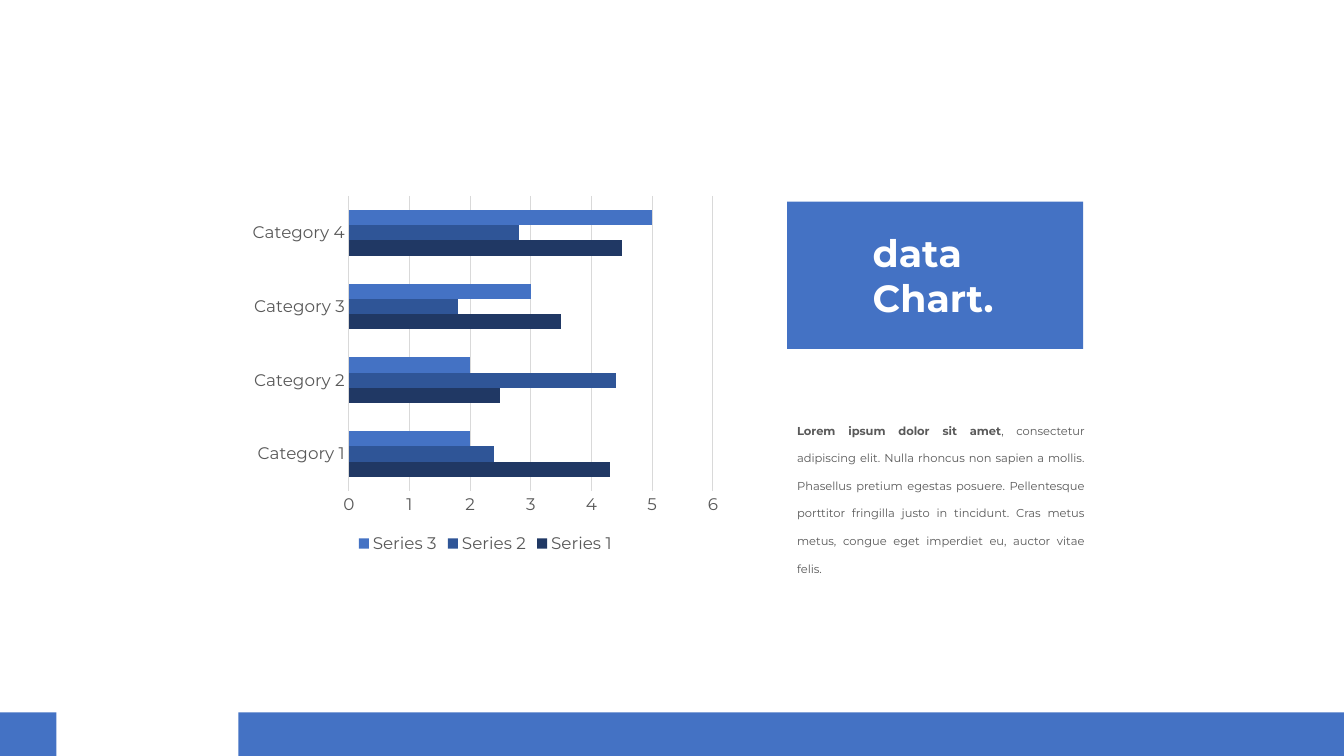
from pptx import Presentation
from pptx.chart.data import CategoryChartData
from pptx.dml.color import RGBColor
from pptx.enum.chart import XL_CHART_TYPE, XL_LEGEND_POSITION, XL_TICK_MARK
from pptx.enum.shapes import MSO_SHAPE
from pptx.enum.text import MSO_ANCHOR, MSO_AUTO_SIZE, PP_ALIGN
from pptx.util import Cm, Pt

FONT = "Montserrat"
HUES = {"blue": "4472C4", "mid": "2F5597", "navy": "203864",
        "text": "595959", "grid": "D9D9D9", "white": "FFFFFF"}
WIDTH, HEIGHT = 33.87, 19.05
SERIES = [("Series 1", (4.3, 2.5, 3.5, 4.5), "navy"),
          ("Series 2", (2.4, 4.4, 1.8, 2.8), "mid"),
          ("Series 3", (2, 2, 3, 5), "blue")]
LEAD = "Lorem ipsum dolor sit amet"
BODY = (", consectetur adipiscing elit. Nulla rhoncus non sapien a mollis. "
        "Phasellus pretium egestas posuere. Pellentesque porttitor fringilla "
        "justo in tincidunt. Cras metus metus, congue eget imperdiet eu, "
        "auctor vitae felis.")


def hue(name):
    return RGBColor.from_string(HUES[name])


def style(font, size, color, bold=False):
    font.name, font.size, font.bold = FONT, Pt(size), bold
    font.color.rgb = hue(color)


def add_run(para, text, size, color, bold=False):
    run = para.add_run()
    run.text = text
    style(run.font, size, color, bold)


def add_block(slide, x, y, w, h):
    """Draw a plain blue rectangle."""
    block = slide.shapes.add_shape(MSO_SHAPE.RECTANGLE, Cm(x), Cm(y), Cm(w), Cm(h))
    block.shadow.inherit = False
    block.fill.solid()
    block.fill.fore_color.rgb = hue("blue")
    block.line.fill.background()


def add_footer(slide, x, y, w, h):
    """Draw the bottom band, with a gap near its left end."""
    left, right = 1.42, 6.01
    add_block(slide, x + right, y, w - right, h)
    add_block(slide, x, y, left, h)


def add_bars(slide, x, y, w, h):
    data = CategoryChartData()
    data.categories = [f"Category {n}" for n in range(1, 5)]
    for name, vals, _ in SERIES:
        data.add_series(name, vals)
    chart = slide.shapes.add_chart(XL_CHART_TYPE.BAR_CLUSTERED,
                                   Cm(x), Cm(y), Cm(w), Cm(h), data).chart
    style(chart.font, 12, "text")
    chart.has_title = False

    plot = chart.plots[0]
    plot.gap_width, plot.overlap = 182, 0
    plot.vary_by_categories = False
    for bar, (_, _, color) in zip(plot.series, SERIES):
        bar.format.fill.solid()
        bar.format.fill.fore_color.rgb = hue(color)

    cats, vals = chart.category_axis, chart.value_axis
    for axis in (cats, vals):
        axis.major_tick_mark = axis.minor_tick_mark = XL_TICK_MARK.NONE
        style(axis.tick_labels.font, 12, "text")
    vals.minimum_scale, vals.maximum_scale, vals.major_unit = 0, 6, 1
    vals.format.line.fill.background()
    vals.has_major_gridlines = True
    for line in (cats.format.line, vals.major_gridlines.format.line):
        line.color.rgb = hue("grid")
        line.width = Pt(0.75)

    chart.has_legend = True
    chart.legend.position = XL_LEGEND_POSITION.BOTTOM
    chart.legend.include_in_layout = False
    style(chart.legend.font, 12, "text")


def add_title(slide, x, y, w, h):
    """Draw the blue panel and set the title on top of it."""
    add_block(slide, x, y, w, h)
    title = slide.shapes.title
    title.left, title.top = Cm(x + 1.9), Cm(y + 0.58)
    title.width, title.height = Cm(4), Cm(2.56)
    frame = title.text_frame
    frame.word_wrap = True
    frame.auto_size = MSO_AUTO_SIZE.NONE
    frame.vertical_anchor = MSO_ANCHOR.TOP
    para = frame.paragraphs[0]
    para.alignment = PP_ALIGN.LEFT
    add_run(para, "data Chart.", 27, "white", True)
    # The panel was drawn after the placeholder, so bring the title forward.
    slide.shapes._spTree.append(title._element)


def add_body(slide, x, y, w, h):
    frame = slide.shapes.add_textbox(Cm(x), Cm(y), Cm(w), Cm(h)).text_frame
    frame.word_wrap = True
    para = frame.paragraphs[0]
    para.alignment = PP_ALIGN.JUSTIFY
    para.line_spacing = 2.0
    add_run(para, LEAD, 8.2, "text", True)
    add_run(para, BODY, 8.2, "text")


def main():
    deck = Presentation()
    deck.slide_width, deck.slide_height = Cm(WIDTH), Cm(HEIGHT)
    slide = deck.slides.add_slide(deck.slide_layouts[5])
    add_footer(slide, 0, 17.95, WIDTH, 1.1)
    add_bars(slide, 6.12, 4.75, 12.22, 9.3)
    add_title(slide, 19.84, 5.08, 7.46, 3.71)
    add_body(slide, 19.84, 10.21, 7.75, 4.37)
    deck.save("out.pptx")


if __name__ == "__main__":
    main()
